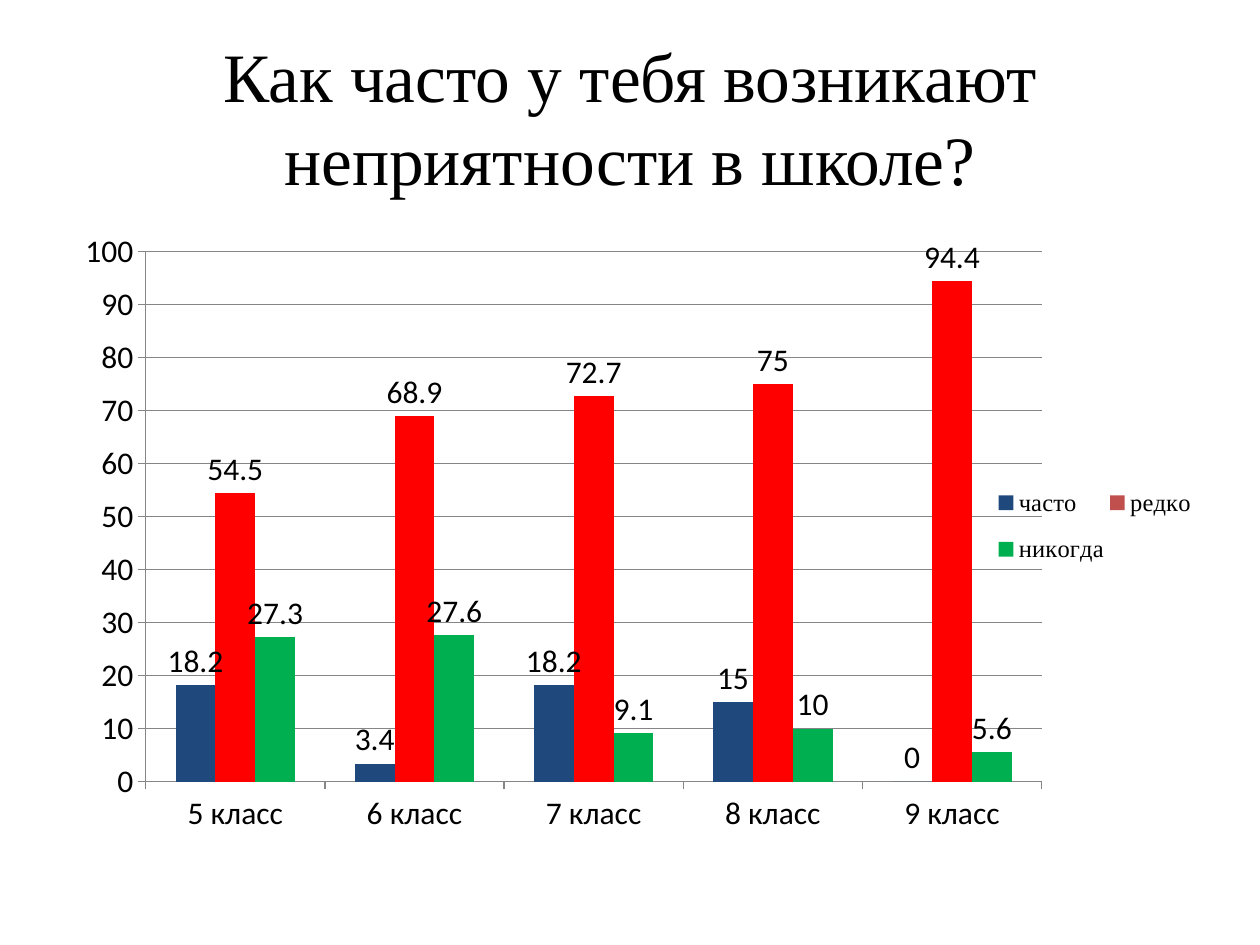
from lxml.etree import SubElement
from pptx import Presentation
from pptx.chart.data import CategoryChartData
from pptx.dml.color import RGBColor
from pptx.enum.chart import XL_CHART_TYPE, XL_LABEL_POSITION, XL_LEGEND_POSITION, XL_TICK_MARK
from pptx.enum.text import MSO_ANCHOR, PP_ALIGN
from pptx.oxml.ns import qn
from pptx.util import Inches, Pt

COLORS = {
    "text": "000000",
    "axis": "868686",
    "often": "1F497D",
    "rarely": "C0504D",
    "rarely_bar": "FF0000",
    "never": "00B050",
}
TITLE = "Как часто у тебя возникают неприятности в школе?"
CLASSES = [f"{number} класс" for number in range(5, 10)]
# Name, values, series colour, colour of the single bars
SERIES = [
    ("часто", (18.2, 3.4, 18.2, 15, 0), "often", None),
    ("редко", (54.5, 68.9, 72.7, 75, 94.4), "rarely", "rarely_bar"),
    ("никогда", (27.3, 27.6, 9.1, 10, 5.6), "never", None),
]


def color(name):
    return RGBColor.from_string(COLORS[name])


def set_attributes(target, values):
    for name, value in values.items():
        setattr(target, name, value)


def format_font(font, name, size):
    set_attributes(font, {"name": name, "size": Pt(size), "bold": False})
    font.color.rgb = color("text")


def fill_solid(element_format, name):
    element_format.fill.solid()
    element_format.fill.fore_color.rgb = color(name)


def add_title(slide, text):
    box = slide.shapes.add_textbox(Inches(0.5), Inches(0.3), Inches(9), Inches(1.25))
    frame = box.text_frame
    set_attributes(frame, {"word_wrap": True, "vertical_anchor": MSO_ANCHOR.MIDDLE})
    paragraph = frame.paragraphs[0]
    paragraph.alignment = PP_ALIGN.CENTER
    run = paragraph.add_run()
    run.text = text
    format_font(run.font, "Times New Roman", 39.6)


def set_layout(layout, x, y, width, height, inner=False):
    """Place a chart part by fractions of the chart area."""
    manual = SubElement(layout, qn("c:manualLayout"))
    values = {"layoutTarget": "inner"} if inner else {}
    values.update(xMode="edge", yMode="edge", x=x, y=y, w=width, h=height)
    for name, value in values.items():
        SubElement(manual, qn(f"c:{name}")).set("val", str(value))


def format_axis(axis):
    set_attributes(axis, {"major_tick_mark": XL_TICK_MARK.OUTSIDE,
                          "minor_tick_mark": XL_TICK_MARK.NONE})
    axis.format.line.color.rgb = color("axis")


def format_series(series, series_color, bar_color):
    fill_solid(series.format, series_color)
    if bar_color:
        for index in range(len(CLASSES)):
            fill_solid(series.points[index].format, bar_color)
    set_attributes(series.data_labels, {"show_value": True,
                                        "position": XL_LABEL_POSITION.OUTSIDE_END})


def add_legend(chart):
    chart.has_legend = True
    legend = chart.legend
    set_attributes(legend, {"position": XL_LEGEND_POSITION.RIGHT,
                            "include_in_layout": False})
    format_font(legend.font, "Times New Roman", 14)
    layout = legend._element.get_or_add_layout()
    set_layout(layout, 0.82, 0.4, 0.18, 0.18)


def add_answer_chart(slide):
    data = CategoryChartData()
    data.categories = CLASSES
    for name, values, *_ in SERIES:
        data.add_series(name, values)
    chart = slide.shapes.add_chart(
        XL_CHART_TYPE.COLUMN_CLUSTERED,
        Inches(0.5), Inches(1.75), Inches(9), Inches(4.95), data).chart
    chart.has_title = False
    format_font(chart.font, "Calibri", 18)

    # Plot area and columns
    plot = chart.plots[0]
    set_attributes(plot, {"gap_width": 150, "overlap": 0, "vary_by_categories": False})
    plot_area = chart._chartSpace.chart.plotArea
    layout = plot_area.find(qn("c:layout"))
    if layout is None:
        layout = SubElement(plot_area, qn("c:layout"))
        plot_area.insert(0, layout)
    set_layout(layout, 0.073, 0.05, 0.79, 0.85, inner=True)
    for series, (_, _, series_color, bar_color) in zip(plot.series, SERIES):
        format_series(series, series_color, bar_color)

    # Axes and gridlines
    for axis in (chart.category_axis, chart.value_axis):
        format_axis(axis)
    set_attributes(chart.value_axis, {"minimum_scale": 0, "maximum_scale": 100,
                                      "major_unit": 10, "has_major_gridlines": True})
    chart.value_axis.major_gridlines.format.line.color.rgb = color("axis")

    add_legend(chart)


def main():
    presentation = Presentation()
    set_attributes(presentation, {"slide_width": Inches(10), "slide_height": Inches(7.5)})
    slide = presentation.slides.add_slide(presentation.slide_layouts[6])
    add_title(slide, TITLE)
    add_answer_chart(slide)
    presentation.save("out.pptx")


if __name__ == "__main__":
    main()
